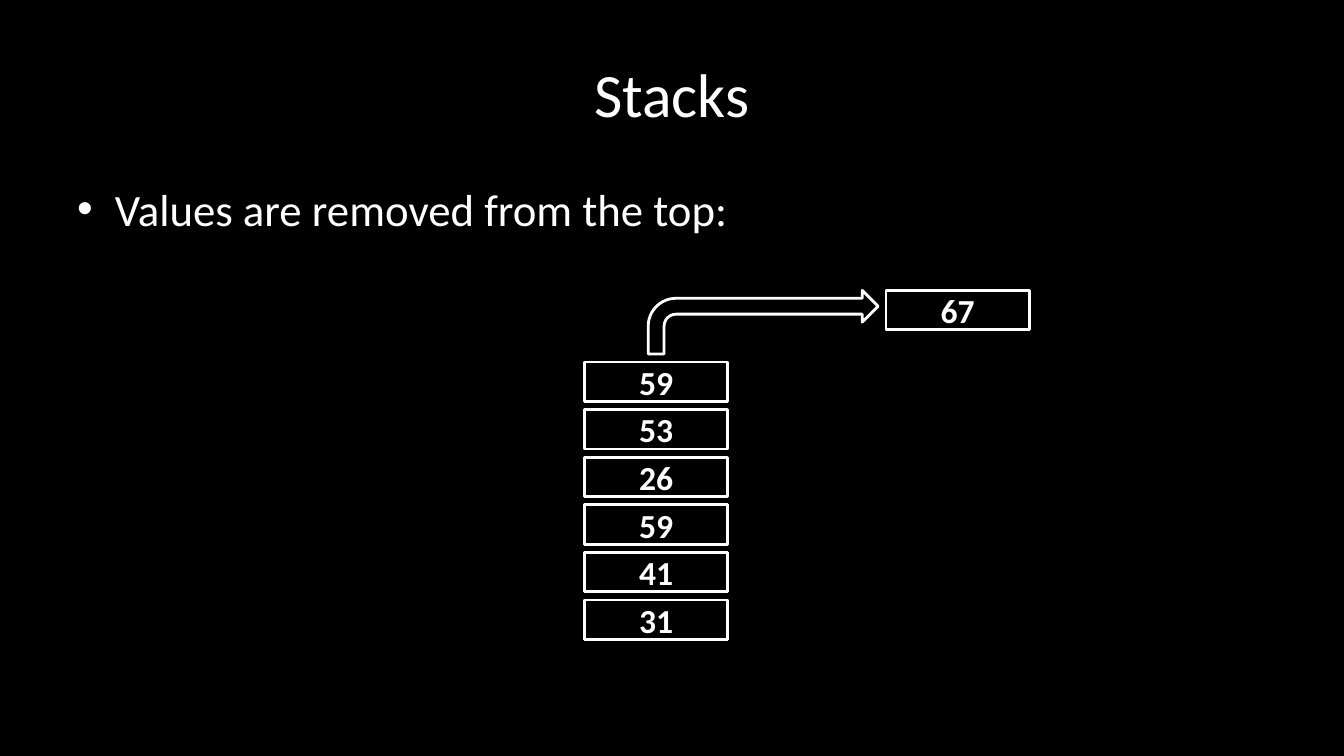
from lxml.etree import SubElement
from pptx import Presentation
from pptx.dml.color import RGBColor
from pptx.enum.shapes import MSO_SHAPE
from pptx.enum.text import MSO_ANCHOR, PP_ALIGN
from pptx.oxml.ns import qn
from pptx.util import Pt

BLACK = RGBColor(0x00, 0x00, 0x00)
WHITE = RGBColor(0xFF, 0xFF, 0xFF)
FONT = "Calibri"
CELL_W, CELL_H, PITCH = 102.4, 28.2, 34


def add_run(p, text, size, bold=False):
    """Add one white run to a paragraph."""
    r = p.add_run()
    r.text = text
    r.font.name = FONT
    r.font.size = Pt(size)
    r.font.bold = bold
    r.font.color.rgb = WHITE


def add_text_box(slide, x, y, w, h, anchor):
    """Add a wrapping text box and return its text frame."""
    tf = slide.shapes.add_textbox(Pt(x), Pt(y), Pt(w), Pt(h)).text_frame
    tf.word_wrap = True
    tf.vertical_anchor = anchor
    return tf


def add_title(slide, x, y, w, h, text):
    """Place the centred title in its box."""
    p = add_text_box(slide, x, y, w, h, MSO_ANCHOR.MIDDLE).paragraphs[0]
    p.alignment = PP_ALIGN.CENTER
    add_run(p, text, 44)


def add_body(slide, x, y, w, h, text):
    """Place the bulleted statement in its box."""
    p = add_text_box(slide, x, y, w, h, MSO_ANCHOR.TOP).paragraphs[0]
    pPr = p._p.get_or_add_pPr()
    pPr.set("marL", str(Pt(27)))
    pPr.set("indent", str(-Pt(27)))
    SubElement(pPr, qn("a:buFont"), typeface="Arial")
    SubElement(pPr, qn("a:buChar"), char="•")
    add_run(p, text, 32)


def add_outline(slide, kind, x, y, w, h):
    """Add an unfilled shape with a white outline."""
    sp = slide.shapes.add_shape(kind, Pt(x), Pt(y), Pt(w), Pt(h))
    sp.shadow.inherit = False
    sp.fill.background()
    sp.line.color.rgb = WHITE
    sp.line.width = Pt(2)
    return sp


def add_cell(slide, x, y, value):
    """Add one stack cell holding a value."""
    sp = add_outline(slide, MSO_SHAPE.RECTANGLE, x, y, CELL_W, CELL_H)
    tf = sp.text_frame
    tf.margin_top = tf.margin_bottom = 0
    tf.vertical_anchor = MSO_ANCHOR.MIDDLE
    p = tf.paragraphs[0]
    p.alignment = PP_ALIGN.CENTER
    add_run(p, value, 24, bold=True)


def add_stack(slide, x, y, w, h, values, popped):
    """Draw the stack from its bottom up, then the popped value and arrow."""
    bottom = y + h - CELL_H
    for i, value in enumerate(values):
        add_cell(slide, x, bottom - i * PITCH, value)
    add_cell(slide, x + w - CELL_W, y, popped)
    add_outline(slide, MSO_SHAPE.BENT_ARROW, x + 45.4, y, 164.2, 45.4)


def main():
    """Build the slide and save it."""
    prs = Presentation()
    prs.slide_width, prs.slide_height = Pt(960), Pt(540)
    slide = prs.slides.add_slide(prs.slide_layouts[6])
    slide.background.fill.solid()
    slide.background.fill.fore_color.rgb = BLACK
    add_title(slide, 48, 21.6, 864, 90, "Stacks")
    add_body(slide, 48, 126, 864, 356.4, "Values are removed from the top:")
    add_stack(slide, 417.6, 207.4, 317.7, 249.4,
              ["31", "41", "59", "26", "53", "59"], "67")
    prs.save("out.pptx")


if __name__ == "__main__":
    main()
